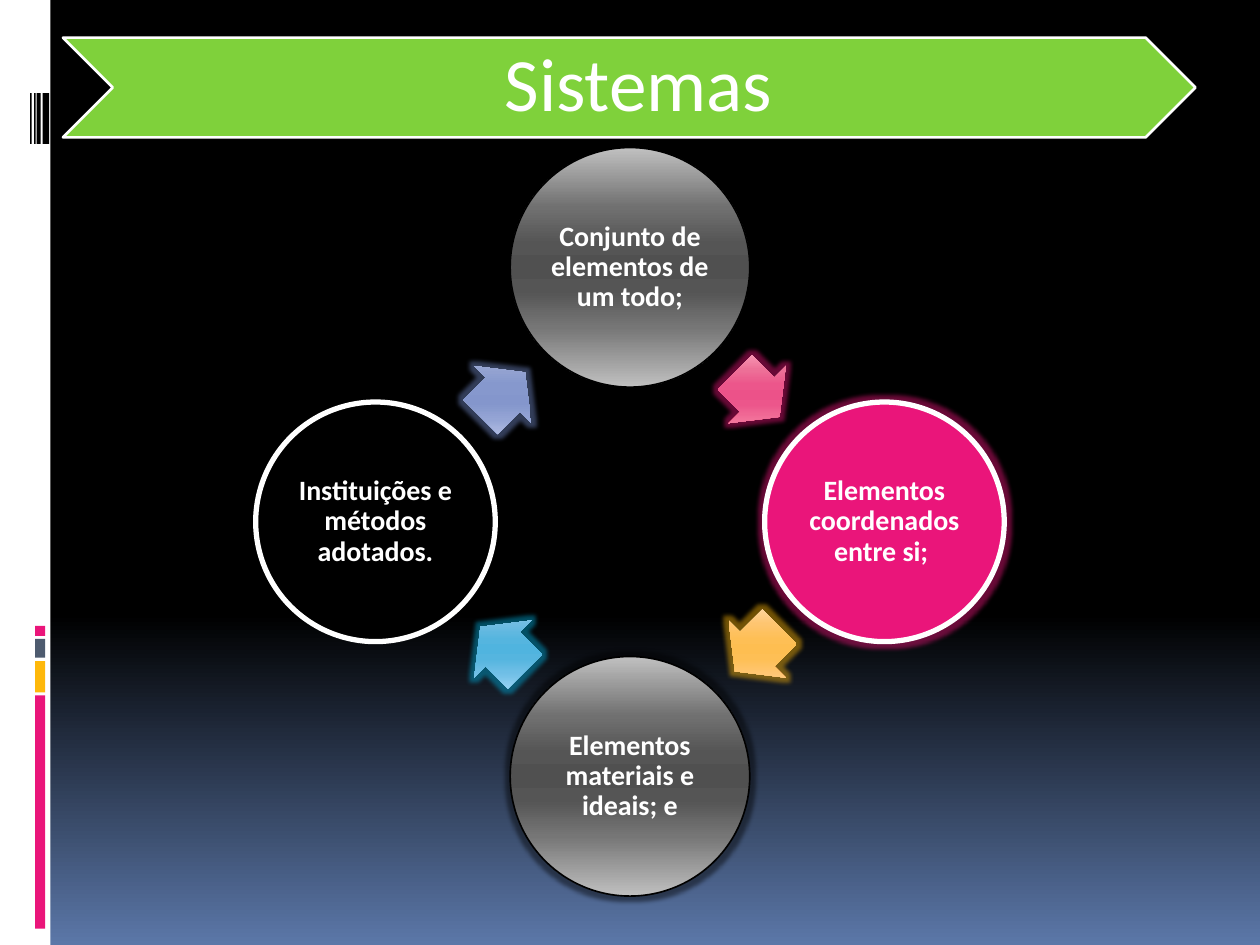
from math import cos, radians, sin

from lxml.etree import SubElement
from pptx import Presentation
from pptx.dml.color import RGBColor
from pptx.enum.shapes import MSO_SHAPE
from pptx.enum.text import MSO_ANCHOR, MSO_AUTO_SIZE, PP_ALIGN
from pptx.oxml.ns import qn
from pptx.util import Cm, Pt

COLORS = {
    "white": "FFFFFF", "black": "000000", "green": "7FD13B", "pink": "EA157A",
    "amber": "FEB80A", "slate": "4E5B6F", "cyan": "00ADDC", "blue": "738AC8",
}
BACKDROP = [(0, "000000"), (65, "000000"), (100, "5B77A8")]
SHEEN_POSITIONS = (0, 25, 40, 50, 60, 75, 100)
SHEENS = {
    "gray": ("C0C0C0", "707070", "555555", "505050", "555555", "767676", "C0C0C0"),
    "pink": ("FFB6C9", "ED7198", "EC568B", "EC5289", "EC568B", "F2729A", "FFB6C9"),
    "amber": ("FFE1BF", "FEC570", "FEBF55", "FEBE51", "FEBF55", "FFC775", "FFE1BF"),
    "cyan": ("B7DFF8", "70BCE2", "55B5DF", "50B4DF", "55B5DF", "72C0E7", "B4DFFB"),
    "blue": ("C7CFEC", "94A3D1", "8698CD", "8496CC", "8698CD", "95A5D5", "C5CEED"),
}

SIDE_BARS = [
    (0, 0, 1.02, 19.05, "white"),
    (0.71, 14.02, 0.2, 4.7, "pink"),
    (0.71, 13.33, 0.2, 0.63, "amber"),
    (0.71, 12.88, 0.2, 0.38, "slate"),
    (0.71, 12.62, 0.2, 0.2, "pink"),
]
STRIPES = [(0.86, 0.13), (0.74, 0.08), (0.69, 0.03), (0.61, 0.03)]

STEPS = [
    ("Conjunto de elementos de um todo;", "gray", "black", 0.94, None, "pink"),
    ("Elementos coordenados entre si; ", "pink", "white", 3, "pink", "amber"),
    ("Elementos materiais e ideais; e", "gray", "black", 0.94, "black", "cyan"),
    ("Instituições e métodos adotados.", "black", "white", 3, None, "blue"),
]
CENTER_X, CENTER_Y, RADIUS = 12.7, 10.52, 5.13
CIRCLE = 4.83
ARROW_WIDTH, ARROW_HEIGHT = 1.27, 1.63


class SlideBuilder:
    font = "Calibri"

    def __init__(self, page):
        self.page = page

    def gradient(self, fill, element, stops):
        fill.gradient()
        fill.gradient_angle = 270
        gradient = next(element.iter(qn("a:gradFill")))
        gradient.set("rotWithShape", "0")
        stop_list = gradient.find(qn("a:gsLst"))
        for stop in list(stop_list):
            stop_list.remove(stop)
        for position, color in stops:
            stop = SubElement(stop_list, qn("a:gs"), pos=str(position * 1000))
            SubElement(stop, qn("a:srgbClr"), val=color)

    def background(self, stops):
        fill = self.page.background.fill
        self.gradient(fill, self.page.element, stops)

    def shape(self, kind, left, top, width, height, color=None, sheen=None,
              line=None, weight=1):
        shape = self.page.shapes.add_shape(kind, Cm(left), Cm(top), Cm(width), Cm(height))
        shape.shadow.inherit = False
        if sheen:
            stops = zip(SHEEN_POSITIONS, SHEENS[sheen])
            self.gradient(shape.fill, shape.element, stops)
        else:
            shape.fill.solid()
            shape.fill.fore_color.rgb = RGBColor.from_string(COLORS[color])
        if line:
            shape.line.color.rgb = RGBColor.from_string(COLORS[line])
            shape.line.width = Pt(weight)
        else:
            shape.line.fill.background()
        return shape

    def glow(self, shape, color):
        effects = next(shape.element.iter(qn("a:effectLst")))
        glow = SubElement(effects, qn("a:glow"), rad=str(Pt(5)))
        tint = SubElement(glow, qn("a:srgbClr"), val=COLORS[color])
        SubElement(tint, qn("a:alpha"), val="45000")

    def text(self, shape, words, size, bold, margins):
        frame = shape.text_frame
        frame.text = words
        frame.word_wrap = True
        frame.auto_size = MSO_AUTO_SIZE.NONE
        frame.vertical_anchor = MSO_ANCHOR.MIDDLE
        frame.margin_left, frame.margin_top, frame.margin_right, frame.margin_bottom = map(Cm, margins)
        paragraph = frame.paragraphs[0]
        paragraph.alignment = PP_ALIGN.CENTER
        paragraph.line_spacing = 0.9
        for span in paragraph.runs:
            span.font.name = self.font
            span.font.size = Pt(size)
            span.font.bold = bold
            span.font.color.rgb = RGBColor.from_string(COLORS["white"])

    def title(self, words, left, top, width, height):
        title = self.page.shapes.title
        title.left, title.top, title.width, title.height = map(Cm, (left, top, width, height))
        self.text(title, words, 43, False, (0.48, 0.15, 0.15, 0.15))
        self.page.shapes.element.append(title.element)

    def circle(self, x, y, words, fill, line, weight, glow):
        paint = {"sheen": fill} if fill == "gray" else {"color": fill}
        circle = self.shape(MSO_SHAPE.OVAL, x - CIRCLE / 2, y - CIRCLE / 2,
                            CIRCLE, CIRCLE, line=line, weight=weight, **paint)
        if glow:
            self.glow(circle, glow)
        self.text(circle, words, 16, True, (0.05,) * 4)

    def arrow(self, x, y, rotation, color):
        arrow = self.shape(MSO_SHAPE.RIGHT_ARROW, x - ARROW_WIDTH / 2, y - ARROW_HEIGHT / 2,
                           ARROW_WIDTH, ARROW_HEIGHT, sheen=color)
        arrow.adjustments[0] = 0.6
        arrow.rotation = rotation
        self.glow(arrow, color)


def ring_point(angle, radius):
    return (CENTER_X + radius * sin(radians(angle)),
            CENTER_Y - radius * cos(radians(angle)))


def main():
    deck = Presentation()
    deck.slide_width, deck.slide_height = Cm(25.4), Cm(19.05)
    builder = SlideBuilder(deck.slides.add_slide(deck.slide_layouts[5]))
    builder.background(BACKDROP)

    for left, top, width, height, color in SIDE_BARS:
        builder.shape(MSO_SHAPE.RECTANGLE, left, top, width, height, color)
    for left, width in STRIPES:
        builder.shape(MSO_SHAPE.RECTANGLE, left, 1.88, width, 1.02, "black")

    builder.shape(MSO_SHAPE.CHEVRON, 1.27, 0.76, 22.83, 2.01, "green", line="white", weight=1.5)
    builder.title("Sistemas", 2.29, 0.76, 20.83, 2.01)

    for index, (words, fill, line, weight, glow, arrow_color) in enumerate(STEPS):
        angle = 90 * index
        builder.circle(*ring_point(angle, RADIUS), words, fill, line, weight, glow)
        middle = ring_point(angle + 45, RADIUS * cos(radians(45)))
        builder.arrow(*middle, angle + 45, arrow_color)

    deck.save("out.pptx")


if __name__ == "__main__":
    main()
